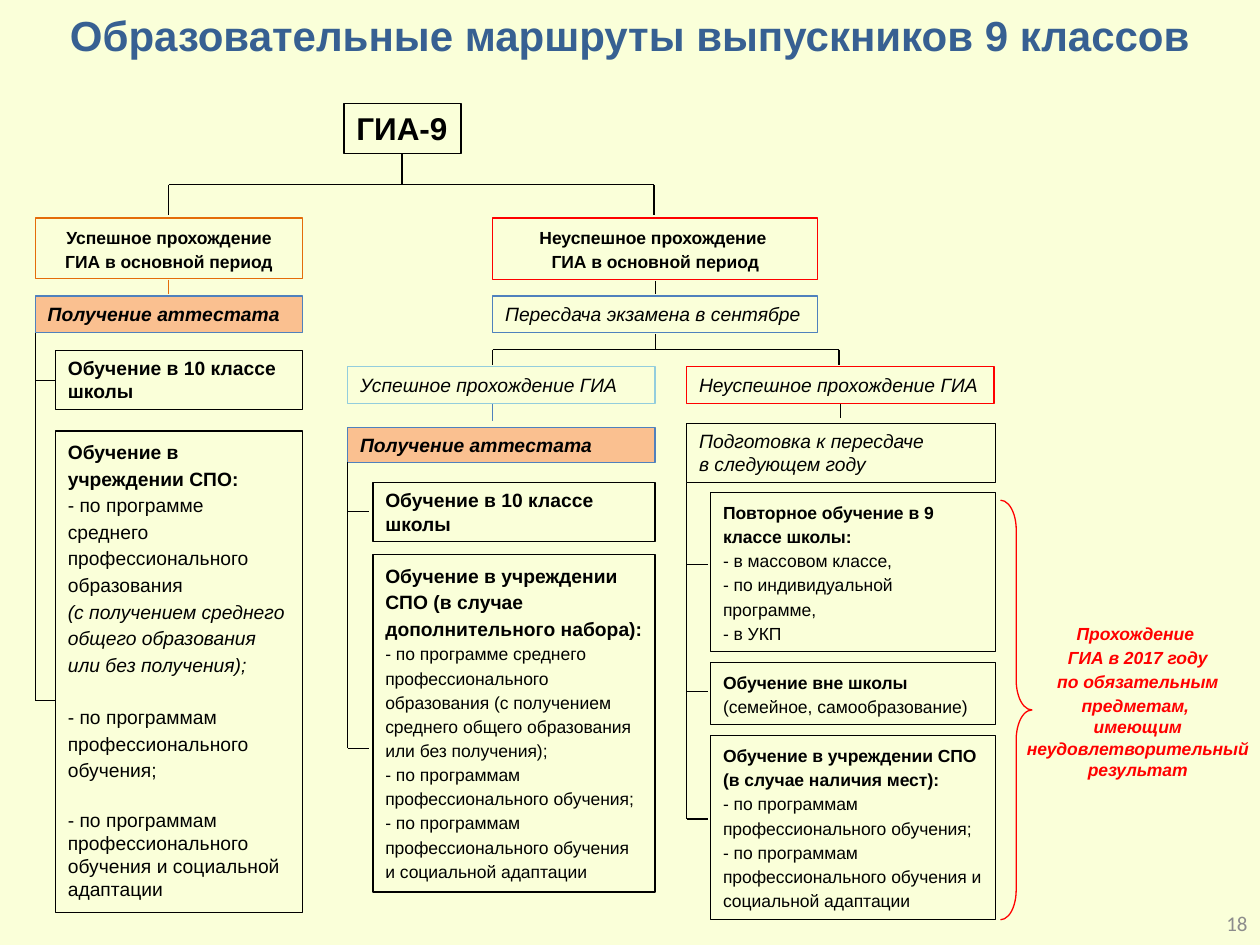
from lxml import etree
from pptx import Presentation
from pptx import util as u
from pptx.dml import color
from pptx.enum import shapes, text
from pptx.oxml import ns

COLUMNS, ROWS = 100, 75
COLORS = {
    "page": "FAFFD9", "title": "376092", "ink": "000000", "number": "8C8C8C",
    "red": "FF0000", "orange": "E46C0A", "peach": "FAC090",
    "blue": "4F81BD", "sky": "93CDDD",
}
LEFT, CENTER, RIGHT = text.PP_ALIGN.LEFT, text.PP_ALIGN.CENTER, text.PP_ALIGN.RIGHT
LOOSE = 1.15

deck = Presentation()
deck.slide_width, deck.slide_height = u.Inches(10), u.Inches(7.5)


def across(columns):
    return round(deck.slide_width * columns / COLUMNS)


def down(rows):
    return round(deck.slide_height * rows / ROWS)


def place(box):
    left, top, width, height = box
    return across(left), down(top), across(width), down(height)


def rgb(name):
    return color.RGBColor.from_string(COLORS[name])


def para(words, style="", size=11, spacing=1.0, after=0):
    return words, style, size, spacing, after


def write(shape, paras, ink="ink", align=LEFT, wrap=True, face="Arial"):
    frame = shape.text_frame
    frame.word_wrap = wrap
    frame.vertical_anchor = text.MSO_ANCHOR.TOP
    for index, (words, style, size, spacing, after) in enumerate(paras):
        item = frame.add_paragraph() if index else frame.paragraphs[0]
        item.text = words
        item.alignment = align
        item.line_spacing = spacing
        item.space_after = u.Pt(after)
        item.font.name, item.font.size = face, u.Pt(size)
        item.font.bold, item.font.italic = "b" in style, "i" in style
        item.font.color.rgb = rgb(ink)
    return frame


def outline(page, kind, box, line):
    shape = page.shapes.add_shape(kind, *place(box))
    shape.shadow.inherit = False
    shape.fill.background()
    shape.line.color.rgb = rgb(line)
    shape.line.width = u.Pt(0.75)
    return shape


def card(page, box, paras, line="ink", fill=None, align=LEFT, wrap=True):
    shape = outline(page, shapes.MSO_SHAPE.RECTANGLE, box, line)
    if fill:
        shape.fill.solid()
        shape.fill.fore_color.rgb = rgb(fill)
    write(shape, paras, align=align, wrap=wrap)


def label(page, box, paras, **look):
    return write(page.shapes.add_textbox(*place(box)), paras, **look)


def link(page, x1, y1, x2, y2, line="ink"):
    connector = page.shapes.add_connector(
        shapes.MSO_CONNECTOR.STRAIGHT, across(x1), down(y1), across(x2), down(y2))
    connector.line.color.rgb = rgb(line)
    connector.line.width = u.Pt(0.75)
    etree.SubElement(connector._element.spPr, ns.qn("a:effectLst"))


def fork(page, box, stem):
    left, top, width, height = box
    right, middle, bottom = left + width, top + height / 2, top + height
    link(page, left, middle, right, middle)
    link(page, left + stem, top, left + stem, middle)
    for x in (left, right):
        link(page, x, middle, x, bottom)


def stage(page, box, paras, gap, line="ink", stem="ink", center=0.5, **look):
    left, top, width, height = box
    x, bottom = left + width * center, top + height
    card(page, box, paras, line, **look)
    if gap:
        link(page, x, bottom + 0.1, x, bottom + gap, stem)


def branch(page, box, head, head_height, indent, reach, options, **look):
    left, top, width, height = box
    card(page, (left, top, width, head_height), [head], **look)
    link(page, left, top + head_height, left, top + height)
    for offset, option_height, tick, paras in options:
        card(page, (left + indent, top + offset, width - indent, option_height), paras)
        link(page, left, top + tick, left + reach, top + tick)


def exam_stages(page):
    card(page, (27.3, 8.2, 9.3, 4), [para("ГИА-9", "b", 18)], wrap=False)
    fork(page, (13.4, 12.2, 38.5, 4.9), 18.5)
    stage(page, (2.8, 17.3, 21.2, 4.8),
          [para("Успешное прохождение ГИА в основной период", "b", 10, LOOSE)],
          1.2, "orange", "orange", align=CENTER)
    stage(page, (39.1, 17.3, 25.8, 4.9),
          [para("Неуспешное прохождение \nГИА в основной период", "b", 10, LOOSE)],
          1.1, "red", align=CENTER)
    stage(page, (39.1, 23.5, 25.8, 2.9),
          [para("Пересдача экзамена в сентябре", "i")], 0, "blue", wrap=False)
    fork(page, (39.1, 26.5, 27.5, 2.5), 12.9)
    stage(page, (27.6, 29.1, 24.4, 2.9), [para("Успешное прохождение ГИА", "i")],
          1.4, "sky", "blue", center=0.47)
    stage(page, (54.5, 29.1, 24.4, 2.9), [para("Неуспешное прохождение ГИА", "i")],
          1.2, "red", wrap=False)


def retake_note(page, brace_box, note_box):
    brace = outline(page, shapes.MSO_SHAPE.RIGHT_BRACE, brace_box, "red")
    brace.adjustments[0] = 0.94
    frame = label(page, note_box, [
        para("Прохождение \nГИА в 2017 году", "bi", 10, LOOSE),
        para("по обязательным предметам, ", "bi", 10, LOOSE),
        para("имеющим неудовлетворительный результат", "bi", 10),
    ], ink="red", align=CENTER)
    frame.margin_left = frame.margin_right = 0


def main():
    page = deck.slides.add_slide(deck.slide_layouts[6])
    page.background.fill.solid()
    page.background.fill.fore_color.rgb = rgb("page")

    label(page, (0, 0, COLUMNS, 9.7),
          [para("Образовательные маршруты выпускников 9 классов", "b", 24, 1.07)],
          ink="title", align=CENTER)
    number = label(page, (77.5, 71.3, 22.5, 4), [para("18", "", 12)],
                   ink="number", align=RIGHT, face="Calibri")
    number.vertical_anchor = text.MSO_ANCHOR.MIDDLE
    exam_stages(page)

    certificate = para("Получение аттестата", "bi")
    tenth_grade = [para("Обучение в 10 классе школы", "b")]
    training = "- по программам профессионального обучения;"
    adapted = "- по программам профессионального обучения и социальной адаптации"
    training_pair = [para(training, "", 10, LOOSE), para(adapted, "", 10, LOOSE)]

    branch(page, (2.8, 23.5, 21.2, 32.1), certificate, 2.9, 1.6, 1.6, [
        (4.3, 4.7, 6.7, tenth_grade),
        (10.7, 38.2, 32.1, [
            para("Обучение в учреждении СПО:", "b", 11, LOOSE),
            para("- по программе среднего профессионального образования", "", 11, LOOSE),
            para("(с получением среднего общего образования или без получения);",
                 "i", 11, LOOSE, 15),
            para(training, "", 11, LOOSE, 15),
            para(adapted),
        ]),
    ], line="blue", fill="peach")

    branch(page, (27.6, 33.9, 24.4, 25.5), certificate, 2.8, 2, 1.7, [
        (4.4, 4.7, 6.7, tenth_grade),
        (10.1, 26.8, 25.5, [
            para("Обучение в учреждении СПО (в случае дополнительного набора):",
                 "b", 11, LOOSE),
            para("- по программе среднего профессионального образования "
                 "(с получением среднего общего образования или без получения);",
                 "", 10, LOOSE),
            *training_pair,
        ]),
    ], line="blue", fill="peach")

    branch(page, (54.5, 33.6, 24.5, 31.4),
           para("Подготовка к пересдаче \nв следующем году", "i"), 4.7, 1.9, 1.7, [
        (5.5, 12.6, 11.2, [
            para("Повторное обучение в 9 классе школы:", "b", 10, LOOSE),
            para("- в массовом классе,", "", 10, LOOSE),
            para("- по индивидуальной программе,", "", 10, LOOSE),
            para("- в УКП", "", 10, LOOSE),
        ]),
        (19, 4.9, 21.3, [
            para("Обучение вне школы", "b", 10, LOOSE),
            para("(семейное, самообразование)", "", 10, LOOSE),
        ]),
        (24.8, 14.6, 31.4, [
            para("Обучение в учреждении СПО", "b", 10, LOOSE),
            para("(в случае наличия мест):", "b", 10, LOOSE),
            *training_pair,
        ]),
    ])

    retake_note(page, (79.4, 39.7, 2.5, 33.3), (80.6, 48.7, 19.4, 13.8))
    deck.save("out.pptx")


if __name__ == "__main__":
    main()
